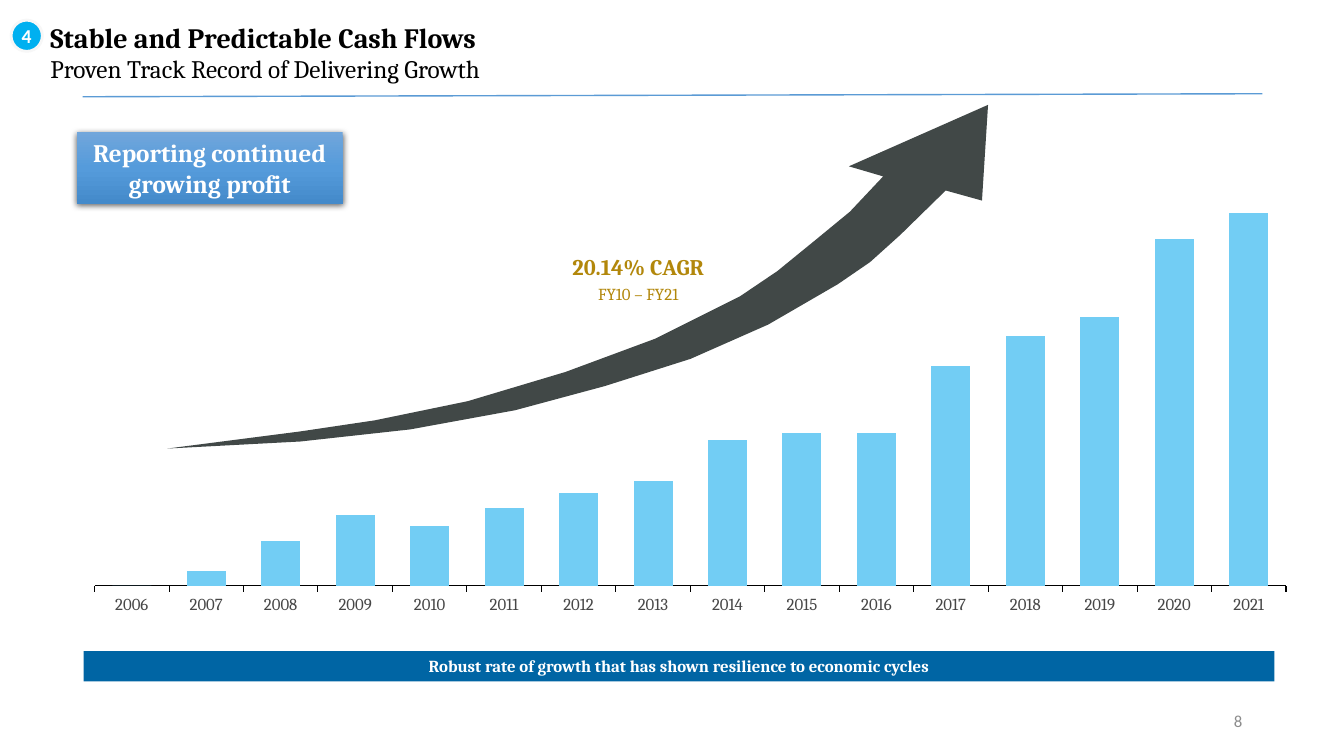
from copy import deepcopy

from lxml.etree import SubElement
from pptx import Presentation
from pptx.chart.data import CategoryChartData
from pptx.dml.color import RGBColor
from pptx.enum.chart import XL_CHART_TYPE, XL_TICK_LABEL_POSITION, XL_TICK_MARK
from pptx.enum.shapes import MSO_CONNECTOR, MSO_SHAPE
from pptx.enum.text import MSO_ANCHOR, MSO_AUTO_SIZE, PP_ALIGN
from pptx.oxml import parse_xml
from pptx.oxml.ns import nsdecls, qn
from pptx.util import Pt

PX = 9144  # 100 px to the inch


def color(hex_text):
    return RGBColor.from_string(hex_text)


def write(shape, lines, align=PP_ALIGN.CENTER, anchor=MSO_ANCHOR.MIDDLE):
    """Fill a shape with one paragraph per (text, size, colour, bold, font)."""
    frame = shape.text_frame
    frame.text = "\n".join(line[0] for line in lines)
    frame.word_wrap = True
    frame.auto_size = MSO_AUTO_SIZE.NONE
    frame.vertical_anchor = anchor
    for para, (_, size, ink, bold, font) in zip(frame.paragraphs, lines):
        para.alignment = align
        for span in para.runs:
            span.font.size = Pt(size)
            span.font.color.rgb = color(ink)
            span.font.bold = bold
            span.font.name = font


deck = Presentation()
deck.slide_width, deck.slide_height = 1333 * PX, 750 * PX
page = deck.slides.add_slide(deck.slide_layouts[5])
shapes = page.shapes

# Title with subtitle line
title = shapes.title
title.left, title.top, title.width, title.height = [n * PX for n in (30, 20, 1049, 64)]
write(title, [
    ("Stable and Predictable Cash Flows", 20, "000000", True, "Cambria"),
    ("Proven Track Record of Delivering Growth", 18, "000000", False, "Cambria"),
], PP_ALIGN.LEFT, MSO_ANCHOR.TOP)
frame = title.text_frame
frame.margin_left = 20 * PX
frame.margin_top = frame.margin_right = frame.margin_bottom = 0

# Rule under the title
rule = shapes.add_connector(MSO_CONNECTOR.STRAIGHT, 82 * PX, 96 * PX, 1252 * PX, 93 * PX)
rule.line.color.rgb = color("5B9BD5")
rule.line.width = Pt(1)
SubElement(rule._element.spPr, qn("a:effectLst"))

# Section number
badge = shapes.add_shape(MSO_SHAPE.OVAL, 11 * PX, 20 * PX, 31 * PX, 31 * PX)
badge.shadow.inherit = False
badge.fill.solid()
badge.fill.fore_color.rgb = color("00B0F0")
badge.line.color.rgb = color("F7F7F7")
badge.line.width = Pt(2)
write(badge, [("4", 14, "FFFFFF", True, "Calibri")])
frame = badge.text_frame
frame.margin_left = frame.margin_top = frame.margin_right = frame.margin_bottom = 0

# Growth arrow: tail, lower edge, head, upper edge
arrow_points = [
    (166, 445), (298, 438), (407, 426), (511, 407), (600, 383), (685, 356),
    (762, 322), (831, 282), (863, 260), (893, 233), (938, 189),
    (974, 199), (980, 104), (842, 165), (876, 175),
    (843, 210), (809, 238), (771, 269), (734, 294), (650, 336),
    (561, 369), (464, 398), (372, 417), (298, 428),
]
outline = shapes.build_freeform(*arrow_points[0], scale=PX)
outline.add_line_segments(arrow_points[1:], close=True)
arrow = outline.convert_to_shape()
arrow.shadow.inherit = False
arrow.fill.solid()
arrow.fill.fore_color.rgb = color("414847")
arrow.line.fill.background()

# Profit chart
profit = CategoryChartData()
profit.categories = [str(year) for year in range(2006, 2022)]
profit.add_series("Series 1", [0, 4, 12, 19, 16, 21, 25, 28, 39, 41, 41, 59, 67, 72, 93, 100])
chart = shapes.add_chart(XL_CHART_TYPE.COLUMN_CLUSTERED, 42 * PX, 131 * PX,
                         1234 * PX, 544 * PX, profit).chart
chart.has_legend = chart.has_title = False
chart.font.name = "Cambria"
chart.font.size = Pt(14)
chart.font.color.rgb = color("000000")
plot = chart.plots[0]
plot.gap_width, plot.overlap = 91, -27
plot.vary_by_categories = False
bars = plot.series[0].format.fill
bars.solid()
bars.fore_color.rgb = color("72CDF4")

years = chart.category_axis
years.major_tick_mark = XL_TICK_MARK.OUTSIDE
years.tick_labels.font.size = Pt(12)
years.tick_labels.font.name = "Cambria"
years.tick_labels.font.color.rgb = color("474747")
years.format.line.color.rgb = color("000000")
years.format.line.width = Pt(0.75)

amounts = chart.value_axis
amounts.minimum_scale, amounts.maximum_scale = 0, 120
amounts.has_major_gridlines = False
amounts.major_tick_mark = XL_TICK_MARK.NONE
amounts.tick_label_position = XL_TICK_LABEL_POSITION.NONE
amounts.format.line.fill.background()

# Fixed inner plot area
plot_area = chart._chartSpace.chart.plotArea
for old_layout in plot_area.findall(qn("c:layout")):
    plot_area.remove(old_layout)
plot_area.insert(0, parse_xml(
    f'<c:layout {nsdecls("c")}><c:manualLayout><c:layoutTarget val="inner"/>'
    '<c:xMode val="edge"/><c:yMode val="edge"/><c:x val="0.042"/><c:y val="0.011"/>'
    '<c:w val="0.958"/><c:h val="0.817"/></c:manualLayout></c:layout>'))

# Growth rate labels
for text, size, bold, top, height in [("20.14% CAGR", 16, True, 246, 37),
                                      ("FY10 – FY21", 12, False, 277, 30)]:
    label = shapes.add_textbox(537 * PX, top * PX, 192 * PX, height * PX)
    write(label, [(text, size, "B2870B", bold, "Cambria")], anchor=MSO_ANCHOR.TOP)

# Bottom banner
banner = shapes.add_shape(MSO_SHAPE.RECTANGLE, 83 * PX, 646 * PX, 1181 * PX, 30 * PX)
banner.shadow.inherit = False
banner.fill.solid()
banner.fill.fore_color.rgb = color("0065A4")
banner.line.fill.background()
write(banner, [("Robust rate of growth that has shown resilience to economic cycles",
                12, "FFFFFF", True, "Cambria")])

# Callout with gradient and soft shadow
callout = shapes.add_shape(MSO_SHAPE.RECTANGLE, 76 * PX, 131 * PX, 264 * PX, 71 * PX)
callout.line.fill.background()
callout.fill.gradient()
callout.fill.gradient_angle = 270
stop_list = callout._element.spPr.find(qn("a:gradFill")).find(qn("a:gsLst"))
stop_list.insert(1, deepcopy(stop_list[0]))
for stop, position, ink in zip(callout.fill.gradient_stops, (0, 0.5, 1),
                               ("71A6DB", "559BDB", "448ACA")):
    stop.position = position
    stop.color.rgb = color(ink)
callout.shadow.inherit = False
callout._element.spPr.find(qn("a:effectLst")).append(parse_xml(
    f'<a:outerShdw {nsdecls("a")} blurRad="{Pt(4.5)}" dist="{Pt(1.5)}" dir="5400000" '
    'rotWithShape="0"><a:srgbClr val="000000"><a:alpha val="63000"/></a:srgbClr></a:outerShdw>'))
write(callout, [("Reporting continued growing profit", 18, "FFFFFF", True, "Cambria")])

# Slide number
number = shapes.add_textbox(942 * PX, 695 * PX, 300 * PX, 40 * PX)
write(number, [("8", 12, "8C8C8C", False, "Calibri")], PP_ALIGN.RIGHT)

deck.save("out.pptx")
